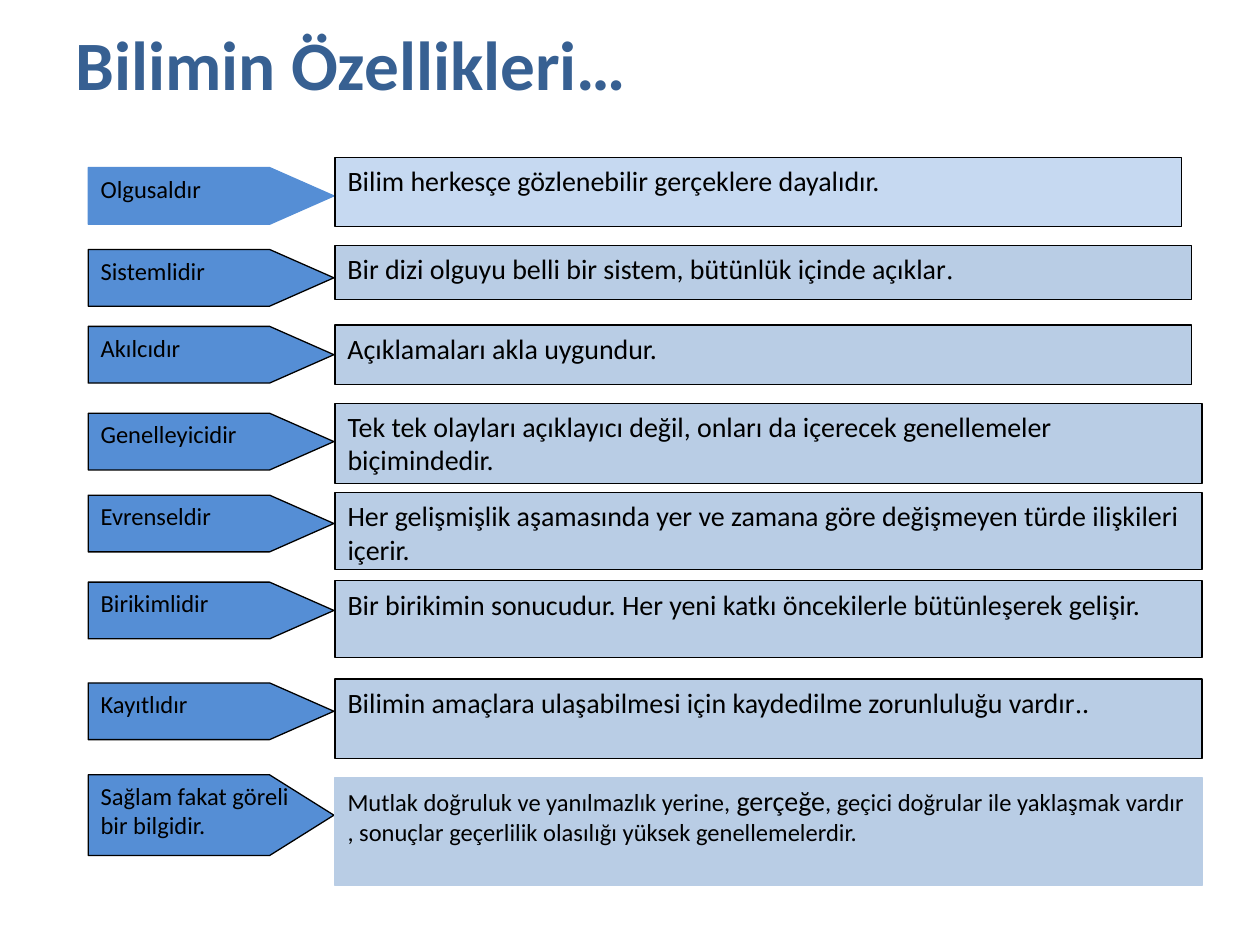
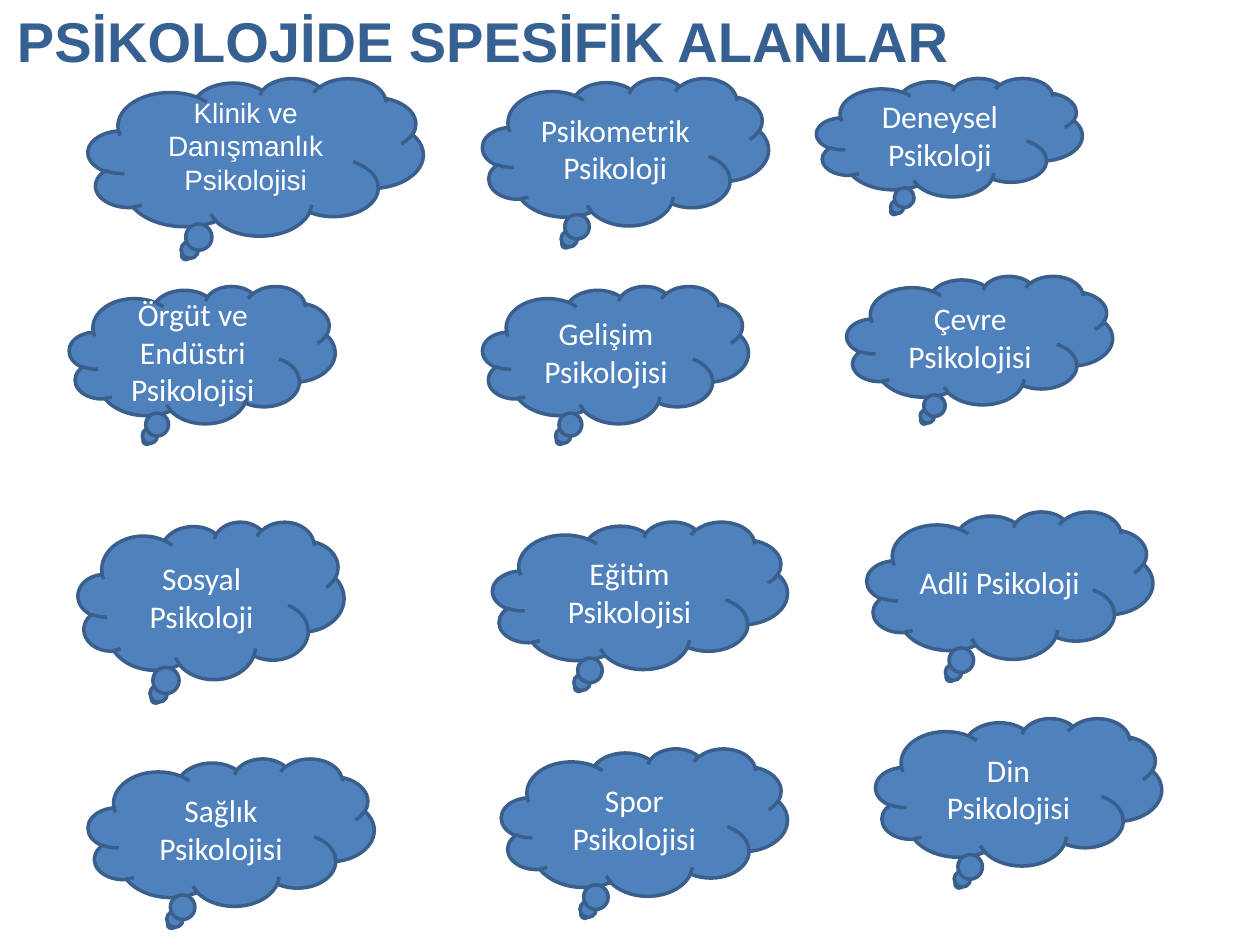
from dataclasses import dataclass
from typing import NamedTuple

import pptx
import pptx.dml.color
import pptx.enum.shapes
import pptx.enum.text
import pptx.shapes.autoshape
import pptx.slide
import pptx.text.text
import pptx.util

Inches = pptx.util.Inches
Pt = pptx.util.Pt
Shape = pptx.shapes.autoshape.Shape
Slide = pptx.slide.Slide
ALIGN = pptx.enum.text.PP_ALIGN
ANCHOR = pptx.enum.text.MSO_ANCHOR
KIND = pptx.enum.shapes.MSO_SHAPE

COLORS = {
    "title": "376092",
    "arrow": "558ED5",
    "box": "B9CDE5",
    "light_box": "C6D9F1",
    "cloud": "4F81BD",
    "cloud_line": "3A5F8C",
    "black": "000000",
    "white": "FFFFFF",
}

# Shared text formats
TITLE = {"name": "Calibri", "size": Pt(39.6), "bold": True}
CAPS_TITLE = {"name": "Arial", "size": Pt(32), "bold": True}
LABEL = {"name": "Calibri", "size": Pt(14)}
BODY = {"name": "Calibri", "size": Pt(16)}
SERIF = {"name": "Times New Roman", "size": Pt(16)}
CLOUD = {"name": "Calibri", "size": Pt(18)}
CLOUD_SMALL = {"name": "Arial", "size": Pt(16)}

# Arrow column and description column of the first slide
ARROW_LEFT, ARROW_WIDTH, POINT_LENGTH = 0.7, 1.95, 0.51
BOX_LEFT = 2.66


class Area(NamedTuple):
    left: float
    top: float
    width: float
    height: float

    def lengths(self) -> list:
        return [Inches(v) for v in self]


class Run(NamedTuple):
    text: str
    font: dict


@dataclass
class Feature:
    label: str
    runs: list
    arrow_top: float
    box_top: float
    box_width: float
    box_height: float
    arrow_height: float = 0.45
    arrow_line: str = "black"
    box_fill: str = "box"
    box_line: str = "black"


@dataclass
class Field:
    text: str
    area: Area


FEATURES = [
    Feature("Olgusaldır",
            [Run("Bilim herkesçe gözlenebilir gerçeklere dayalıdır.", BODY)],
            1.33, 1.25, 6.72, 0.55, arrow_line="arrow", box_fill="light_box"),
    Feature("Sistemlidir",
            [Run("Bir dizi olguyu belli bir sistem, bütünlük içinde açıklar", BODY),
             Run(".", SERIF)],
            1.98, 1.95, 6.8, 0.43),
    Feature("Akılcıdır", [Run("Açıklamaları akla uygundur.", BODY)],
            2.59, 2.58, 6.8, 0.47),
    Feature("Genelleyicidir",
            [Run("Tek tek olayları açıklayıcı değil, onları da içerecek "
                 "genellemeler biçimindedir.", BODY)],
            3.28, 3.2, 6.88, 0.64),
    Feature("Evrenseldir",
            [Run("Her gelişmişlik aşamasında yer ve zamana göre değişmeyen "
                 "türde ilişkileri içerir.", BODY)],
            3.93, 3.91, 6.88, 0.61),
    Feature("Birikimlidir",
            [Run("Bir birikimin sonucudur. Her yeni katkı öncekilerle "
                 "bütünleşerek gelişir.", BODY)],
            4.62, 4.61, 6.88, 0.61),
    Feature("Kayıtlıdır",
            [Run("Bilimin amaçlara ulaşabilmesi için kaydedilme zorunluluğu "
                 "vardır", BODY), Run(".", SERIF), Run(".", BODY)],
            5.42, 5.39, 6.88, 0.63),
    Feature("Sağlam fakat göreli bir bilgidir.",
            [Run("Mutlak doğruluk ve yanılmazlık yerine, ", LABEL),
             Run("gerçeğe", BODY),
             Run(", geçici doğrular ile yaklaşmak vardır , sonuçlar geçerlilik "
                 "olasılığı yüksek genellemelerdir.", LABEL)],
            6.15, 6.17, 6.88, 0.86, arrow_height=0.64, box_line="box"),
]

FIELDS = [
    Field("", Area(0.7, 0.62, 2.66, 1.25)),
    Field("Psikometrik Psikoloji", Area(3.83, 0.62, 2.27, 1.17)),
    Field("Deneysel Psikoloji", Area(6.48, 0.62, 2.11, 0.94)),
    Field("Örgüt ve Endüstri Psikolojisi", Area(0.55, 2.27, 2.11, 1.09)),
    Field("Gelişim Psikolojisi", Area(3.83, 2.27, 2.11, 1.09)),
    Field("Çevre Psikolojisi", Area(6.72, 2.19, 2.11, 1.02)),
    Field("Sosyal Psikoloji", Area(0.62, 4.14, 2.11, 1.25)),
    Field("Eğitim Psikolojisi", Area(3.91, 4.14, 2.34, 1.17)),
    Field("Adli Psikoloji", Area(6.88, 4.06, 2.27, 1.17)),
    Field("Sağlık Psikolojisi", Area(0.7, 6.02, 2.27, 1.17)),
    Field("Spor Psikolojisi", Area(3.98, 5.94, 2.27, 1.17)),
    Field("Din Psikolojisi", Area(6.95, 5.7, 2.27, 1.17)),
]
CLINICAL = Field("Klinik ve Danışmanlık Psikolojisi", Area(1.17, 0.7, 1.56, 0.91))


def rgb(color: str) -> pptx.dml.color.RGBColor:
    return pptx.dml.color.RGBColor.from_string(COLORS[color])


def write(tf: pptx.text.text.TextFrame, runs: list, color: str,
          align: ALIGN = ALIGN.CENTER, anchor: ANCHOR = ANCHOR.MIDDLE,
          space_after: float = 0) -> None:
    """Fill the first paragraph of a frame with formatted runs."""
    tf.word_wrap = True
    tf.vertical_anchor = anchor
    p = tf.paragraphs[0]
    p.alignment = align
    p.space_after = Pt(space_after)
    for run in runs:
        r = p.add_run()
        r.text = run.text
        for key, value in run.font.items():
            setattr(r.font, key, value)
        r.font.color.rgb = rgb(color)


def add_title(s: Slide, run: Run, area: Area, align: ALIGN) -> None:
    sp = s.shapes.title
    sp.left, sp.top, sp.width, sp.height = area.lengths()
    sp.text_frame.auto_size = pptx.enum.text.MSO_AUTO_SIZE.NONE
    write(sp.text_frame, [run], "title", align)


def add_shape(s: Slide, kind: KIND, area: Area, fill: str, line: str,
              line_width: float) -> Shape:
    sp = s.shapes.add_shape(kind, *area.lengths())
    sp.shadow.inherit = False
    sp.fill.solid()
    sp.fill.fore_color.rgb = rgb(fill)
    sp.line.color.rgb = rgb(line)
    sp.line.width = Pt(line_width)
    return sp


def add_feature(s: Slide, f: Feature) -> None:
    """Draw one arrow label and the description beside it."""
    layout = {"align": ALIGN.LEFT, "anchor": ANCHOR.TOP, "space_after": 10}
    arrow = add_shape(s, KIND.PENTAGON,
                      Area(ARROW_LEFT, f.arrow_top, ARROW_WIDTH, f.arrow_height),
                      "arrow", f.arrow_line, 0.75)
    arrow.adjustments[0] = POINT_LENGTH / f.arrow_height
    arrow.text_frame.margin_right = Inches(0.05)
    write(arrow.text_frame, [Run(f.label, LABEL)], "black", **layout)
    box = add_shape(s, KIND.RECTANGLE,
                    Area(BOX_LEFT, f.box_top, f.box_width, f.box_height),
                    f.box_fill, f.box_line, 0.75)
    write(box.text_frame, f.runs, "black", **layout)


def add_field(s: Slide, field: Field) -> None:
    sp = add_shape(s, KIND.CLOUD_CALLOUT, field.area, "cloud", "cloud_line", 2)
    if field.text:
        write(sp.text_frame, [Run(field.text, CLOUD)], "white")


def main() -> None:
    prs = pptx.Presentation()
    prs.slide_width, prs.slide_height = Inches(10), Inches(7.5)
    title_only = prs.slide_layouts[5]

    # Features of science
    s = prs.slides.add_slide(title_only)
    add_title(s, Run("Bilimin Özellikleri…", TITLE), Area(0.5, 0.3, 9, 0.4),
              ALIGN.LEFT)
    for feature in FEATURES:
        add_feature(s, feature)

    # Fields of psychology
    s = prs.slides.add_slide(title_only)
    add_title(s, Run("PSİKOLOJİDE SPESİFİK ALANLAR", CAPS_TITLE),
              Area(0, 0, 7.67, 0.64), ALIGN.CENTER)
    for field in FIELDS:
        add_field(s, field)
    tb = s.shapes.add_textbox(*CLINICAL.area.lengths())
    write(tb.text_frame, [Run(CLINICAL.text, CLOUD_SMALL)], "white")

    prs.save("out.pptx")


if __name__ == "__main__":
    main()
